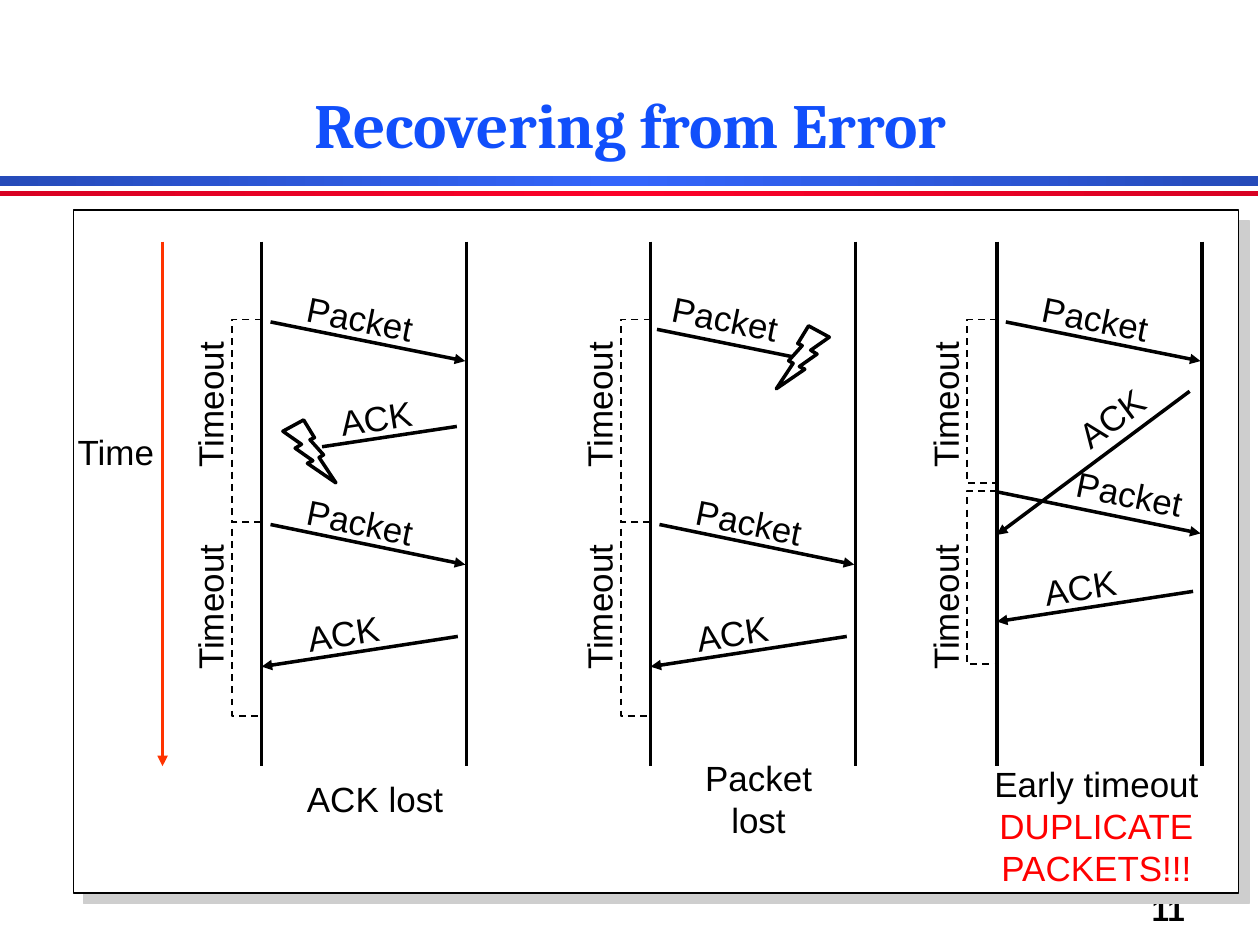
import copy
from dataclasses import dataclass

import pptx
import pptx.dml.color
import pptx.enum.dml
import pptx.enum.shapes
import pptx.enum.text
import pptx.oxml
import pptx.oxml.ns
import pptx.util

Cm, Pt = pptx.util.Cm, pptx.util.Pt
RGB = pptx.dml.color.RGBColor.from_string
SHAPE = pptx.enum.shapes.MSO_SHAPE
ALIGN = pptx.enum.text.PP_ALIGN
ANCHOR = pptx.enum.text.MSO_ANCHOR
qn = pptx.oxml.ns.qn


@dataclass(frozen=True)
class Theme:
    ink: str = "000000"
    paper: str = "FFFFFF"
    title: str = "114FFB"
    time: str = "FF3300"
    alert: str = "FF0000"
    shadow: str = "CECECE"
    blue: tuple = ("264BB9", "3365FB", "264BB9")
    red: tuple = ("D80122", "FC0128", "D80122")
    title_font: str = "Cambria"
    font: str = "Arial"
    title_size: int = 36
    number_size: int = 18
    size: int = 20
    thin: float = 0.75
    dashed: float = 1
    thick: float = 2


T = Theme()

# Content, in cm: x counts from the sender's lifeline, y from the slide top
TITLE, NUMBER = "Recovering from Error", "11"
TOP, BOTTOM, LIFELINE_GAP = 4.88, 15.47, 4.14
BRACKET_DEPTH, TIMEOUT_X, TIMEOUT_YS = 0.6, -1.05, (8.17, 12.26)
DOWN, UP, STEEP = 11.5, -8.8, -36.6  # label slopes in degrees

# Message: text, start, end, arrives, label centre, slope
FIRST_PACKET = ("Packet", (0.18, 6.5), (4.11, 7.29), True, (1.99, 6.43), DOWN)
RETRY = [
    ("Packet", (0.18, 10.59), (4.11, 11.4), True, (1.99, 10.54), DOWN),
    ("ACK", (3.96, 12.85), (0, 13.46), True, (1.65, 12.78), UP),
]
FULL_WAITS = [(6.45, 10.54), (10.54, 14.45)]

# Caption: paragraphs, then centre x, centre y, width, height
SCENARIOS = [
    {"x": 5.28, "waits": FULL_WAITS,
     "messages": [FIRST_PACKET,
                  ("ACK", (3.94, 8.61), (1.22, 9.02), False, (2.31, 8.43), UP)] + RETRY,
     "bolt": (0.43, 8.48, False),
     "caption": ([(["ACK lost"], T.ink)], 2.29, 16.12, 3.6, 1.1)},
    {"x": 13.13, "waits": FULL_WAITS,
     "messages": [("Packet", (0.13, 6.65), (3.05, 7.24), False, (1.51, 6.43), DOWN)] + RETRY,
     "bolt": (2.54, 6.58, True),
     "caption": ([(["Packet lost"], T.ink)], 2.18, 16.12, 3.6, 1.1)},
    {"x": 20.12, "waits": [(6.45, 9.75), (9.91, 13.41)],
     "messages": [FIRST_PACKET,
                  ("ACK", (3.89, 7.9), (0, 10.8), True, (2.31, 8.43), STEEP),
                  ("Packet", (0, 9.93), (4.11, 10.77), True, (2.68, 9.97), DOWN),
                  ("ACK", (3.96, 11.94), (0, 12.55), True, (1.68, 11.85), UP)],
     "bolt": None,
     "caption": ([(["Early timeout"], T.ink), (["DUPLICATE", "PACKETS!!!"], T.alert)],
                 2.01, 16.66, 5.4, 2.79)},
]

prs = pptx.Presentation()
prs.slide_width, prs.slide_height = Cm(25.43), Cm(19.08)
s = prs.slides.add_slide(prs.slide_layouts[6])


def add_text(paragraphs, cx, cy, w, h, rot=0, size=T.size, font=T.font, bold=False,
             align=ALIGN.CENTER, anchor=ANCHOR.MIDDLE, wrap=False, spacing=None):
    """Centre a text box on (cx, cy); each paragraph is (lines, colour)."""
    sp = s.shapes.add_textbox(Cm(cx - w / 2), Cm(cy - h / 2), Cm(w), Cm(h))
    sp.rotation = rot
    tf = sp.text_frame
    tf.word_wrap, tf.vertical_anchor = wrap, anchor
    for i, (lines, color) in enumerate(paragraphs):
        p = tf.add_paragraph() if i else tf.paragraphs[0]
        p.alignment, p.line_spacing = align, spacing
        for j, line in enumerate(lines):
            if j:
                p.add_line_break()
            r = p.add_run()
            r.text = line
            r.font.name, r.font.size, r.font.bold = font, Pt(size), bold
            r.font.color.rgb = RGB(color)


def add_line(start, end, arrow=False, color=T.ink):
    sp = s.shapes.add_connector(pptx.enum.shapes.MSO_CONNECTOR.STRAIGHT,
                                *(Cm(v) for v in start + end))
    sp.line.color.rgb, sp.line.width = RGB(color), Pt(T.thick)
    if arrow:
        sp.line._get_or_add_ln().append(pptx.oxml.parse_xml(
            f'<a:tailEnd {pptx.oxml.ns.nsdecls("a")} type="triangle"/>'))
    sp._element.spPr.append(pptx.oxml.parse_xml(
        f'<a:effectLst {pptx.oxml.ns.nsdecls("a")}/>'))


def add_shape(kind, x, y, w, h, width=T.thick):
    sp = s.shapes.add_shape(kind, Cm(x), Cm(y), Cm(w), Cm(h))
    sp.shadow.inherit = False
    sp.fill.solid()
    sp.fill.fore_color.rgb = RGB(T.paper)
    sp.line.color.rgb, sp.line.width = RGB(T.ink), Pt(width)
    return sp


def add_bar(y, h, colors):
    sp = add_shape(SHAPE.RECTANGLE, 0, y, 25.4, h)
    sp.line.fill.background()
    sp.fill.gradient()
    sp.fill.gradient_angle = 0
    stops = sp._element.spPr.find(".//" + qn("a:gsLst"))
    stops.insert(1, copy.deepcopy(stops[0]))
    for i, (stop, color) in enumerate(zip(sp.fill.gradient_stops, colors)):
        stop.position, stop.color.rgb = i / 2, RGB(color)


def add_bracket(x, top, bottom):
    left = x - BRACKET_DEPTH
    fb = s.shapes.build_freeform(Cm(x), Cm(top))
    fb.add_line_segments([(Cm(left), Cm(top)), (Cm(left), Cm(bottom)),
                          (Cm(x), Cm(bottom))], close=False)
    sp = fb.convert_to_shape()
    sp.shadow.inherit = False
    sp.fill.background()
    sp.line.color.rgb, sp.line.width = RGB(T.ink), Pt(T.dashed)
    sp.line.dash_style = pptx.enum.dml.MSO_LINE.DASH


# Header bars, slide number, framed panel and title
add_bar(3.56, 0.2, T.blue)
add_bar(3.86, 0.1, T.red)
add_text([([NUMBER], T.ink)], 23.53, 18.36, 1.27, 1.02, size=T.number_size,
         bold=True, align=ALIGN.RIGHT, anchor=ANCHOR.TOP)
panel = add_shape(SHAPE.RECTANGLE, 1.48, 4.24, 23.52, 13.79, T.thin)
panel._element.spPr.find(qn("a:effectLst")).append(pptx.oxml.parse_xml(
    f'<a:outerShdw {pptx.oxml.ns.nsdecls("a")} dist="{Pt(8.5)}" dir="2700000" '
    f'algn="ctr" rotWithShape="0"><a:srgbClr val="{T.shadow}"/></a:outerShdw>'))
add_text([([TITLE], T.title)], 12.72, 1.81, 19.89, 3.18, size=T.title_size,
         font=T.title_font, bold=True, anchor=ANCHOR.BOTTOM, wrap=True, spacing=0.89)

# Time axis
add_line((3.28, TOP), (3.28, BOTTOM), arrow=True, color=T.time)
add_text([(["Time"], T.ink)], 2.34, 9.11, 2.08, 1.1)

# Scenarios
for scenario in SCENARIOS:
    x0 = scenario["x"]
    for x in (x0, x0 + LIFELINE_GAP):
        add_line((x, TOP), (x, BOTTOM))
    for (top, bottom), cy in zip(scenario["waits"], TIMEOUT_YS):
        add_bracket(x0, top, bottom)
        add_text([(["Timeout"], T.ink)], x0 + TIMEOUT_X, cy, 3.38, 1.1, rot=270)
    for text, (x1, y1), (x2, y2), arrives, (cx, cy), slope in scenario["messages"]:
        add_line((x0 + x1, y1), (x0 + x2, y2), arrow=arrives)
        add_text([([text], T.ink)], x0 + cx, cy, 2.67, 1.1, rot=slope)
    if scenario["bolt"]:
        dx, y, flipped = scenario["bolt"]
        bolt = add_shape(SHAPE.LIGHTNING_BOLT, x0 + dx, y, 1.07, 1.27)
        if flipped:
            bolt._element.spPr.find(qn("a:xfrm")).set("flipH", "1")
    paragraphs, cx, cy, w, h = scenario["caption"]
    add_text(paragraphs, x0 + cx, cy, w, h, wrap=True)

prs.save("out.pptx")
